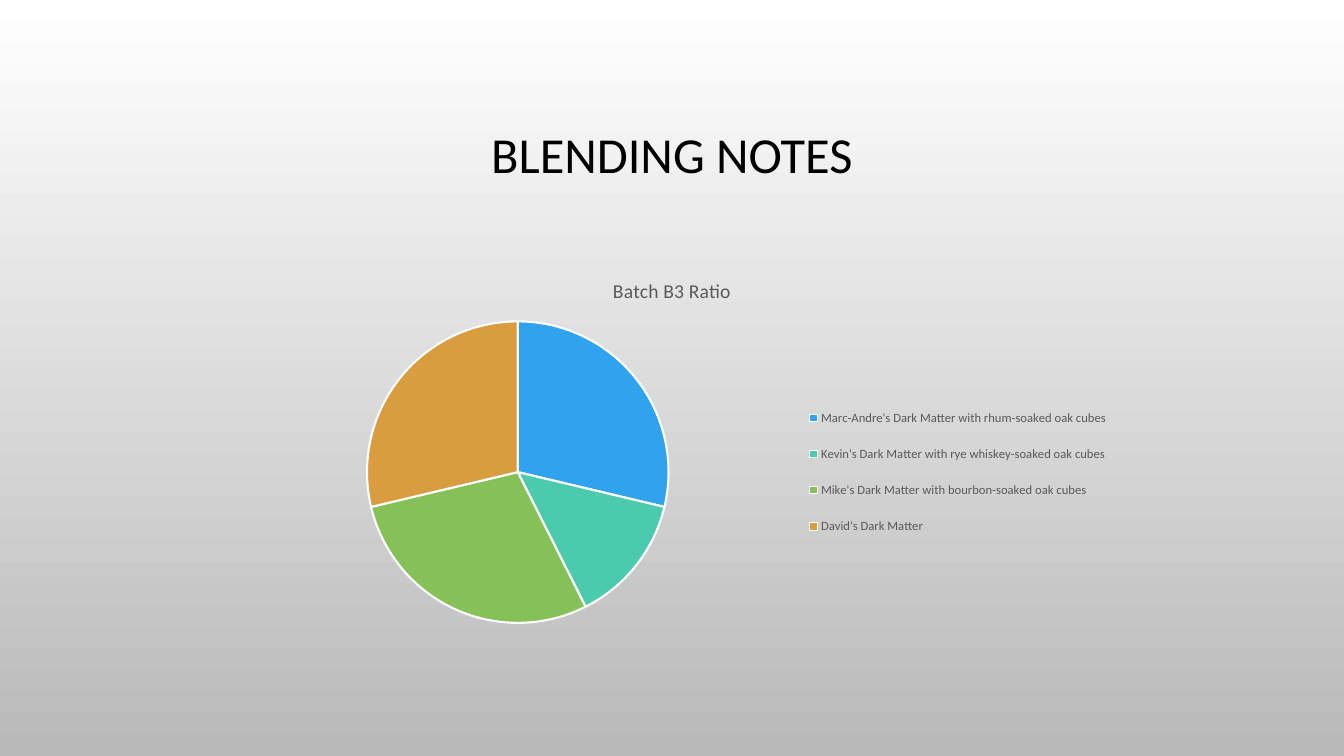
from lxml import etree
from pptx import Presentation
from pptx import util as u
from pptx.chart import data as chart_data
from pptx.dml import color
from pptx.enum import chart as chart_enum, text
from pptx.oxml import ns

FONT = "Calibri"
SLICES = [
    ("Marc-Andre's Dark Matter with rhum-soaked oak cubes", 29, "2FA3EE"),
    ("Kevin's Dark Matter with rye whiskey-soaked oak cubes", 14, "4BCAAD"),
    ("Mike's Dark Matter with bourbon-soaked oak cubes", 29, "86C157"),
    ("David's Dark Matter", 29, "D99C3F"),
]


def rgb(value):
    return color.RGBColor.from_string(value)


def set_layout(parent, index, **fractions):
    """Place a chart part by x, y, w and h as fractions of the chart area."""
    for old in parent.findall(ns.qn("c:layout")):
        parent.remove(old)
    layout = etree.Element(ns.qn("c:layout"))
    manual = etree.SubElement(layout, ns.qn("c:manualLayout"))
    if parent.tag == ns.qn("c:plotArea"):
        etree.SubElement(manual, ns.qn("c:layoutTarget"), val="inner")
    for axis in ("x", "y"):
        etree.SubElement(manual, ns.qn(f"c:{axis}Mode"), val="edge")
    for name, value in fractions.items():
        etree.SubElement(manual, ns.qn(f"c:{name}"), val=str(value))
    parent.insert(index, layout)


presentation = Presentation()
presentation.slide_width = u.Pt(960)
presentation.slide_height = u.Pt(540)
slide = presentation.slides.add_slide(presentation.slide_layouts[5])

# Background: white at the top to grey at the bottom
background = slide.background.fill
background.gradient()
background.gradient_angle = 270
for stop, position, shade in zip(background.gradient_stops, (0, 1), ("FFFFFF", "B9B9B9")):
    stop.position = position
    stop.color.rgb = rgb(shade)

# Title
title = slide.shapes.title
title_box = {"left": 72, "top": 49, "width": 816, "height": 126}
for name, value in title_box.items():
    setattr(title, name, u.Pt(value))
title.text_frame.text = "BLENDING NOTES"
title.text_frame.vertical_anchor = text.MSO_ANCHOR.MIDDLE
heading = title.text_frame.paragraphs[0]
heading.alignment = text.PP_ALIGN.CENTER
heading.line_spacing = 0.9

# Pie chart
ratios = chart_data.CategoryChartData()
ratios.categories = [name for name, share, shade in SLICES]
ratios.add_series("Series 1", [share for name, share, shade in SLICES])
chart = slide.shapes.add_chart(
    chart_enum.XL_CHART_TYPE.PIE, u.Pt(72), u.Pt(186.5), u.Pt(816), u.Pt(269.3), ratios
).chart
plot = chart.plots[0]
plot.vary_by_categories = True
for index, (name, share, shade) in enumerate(SLICES):
    slice_format = plot.series[0].points[index].format
    slice_format.fill.solid()
    slice_format.fill.fore_color.rgb = rgb(shade)
    slice_format.line.color.rgb = rgb("FFFFFF")
    slice_format.line.width = u.Pt(1.5)

chart.has_title = True
chart.chart_title.text_frame.text = "Batch B3 Ratio"
chart.chart_title.include_in_layout = False
chart.has_legend = True
chart.legend.position = chart_enum.XL_LEGEND_POSITION.RIGHT
chart.legend.include_in_layout = False

plot_area = chart.element.find(".//" + ns.qn("c:plotArea"))
legend = chart.element.find(".//" + ns.qn("c:legend"))
set_layout(plot_area, 0, x=0.23, y=0.16, w=0.27, h=0.8)
set_layout(legend, 1, x=0.61, y=0.34, w=0.28, h=0.44)

# Fonts
chart_heading = chart.chart_title.text_frame.paragraphs[0]
fonts = [
    (heading.runs[0].font, 36, "000000"),
    (chart.font, 10, "000000"),
    (chart_heading.runs[0].font, 14, "595959"),
    (chart.legend.font, 9, "595959"),
]
for font, size, shade in fonts:
    for name, value in {"name": FONT, "size": u.Pt(size), "bold": False}.items():
        setattr(font, name, value)
    font.color.rgb = rgb(shade)

presentation.save("out.pptx")
